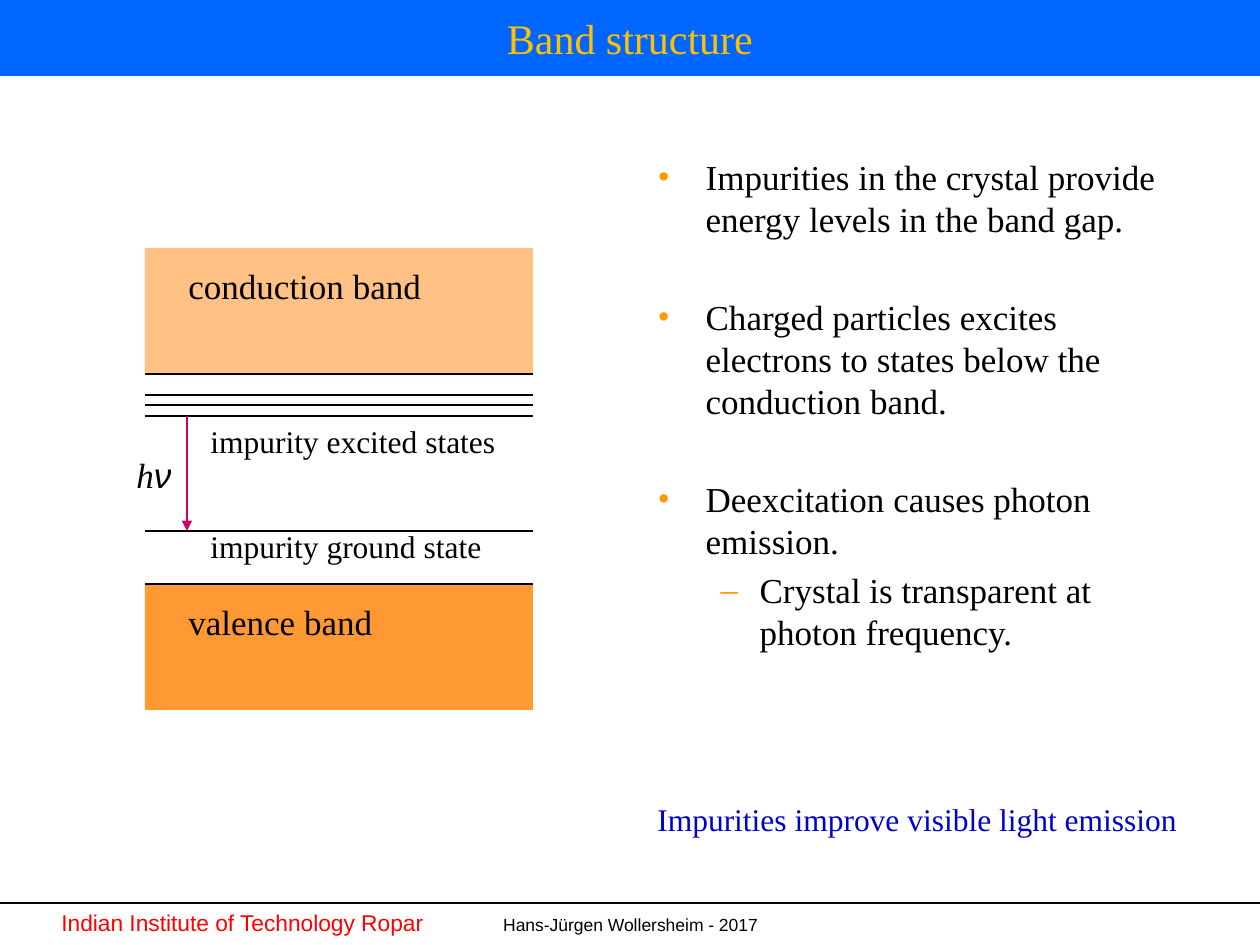
from dataclasses import dataclass
from typing import NamedTuple

from lxml.etree import SubElement
from pptx import Presentation
from pptx.dml.color import RGBColor
from pptx.enum.shapes import MSO_CONNECTOR as Connector, MSO_SHAPE as Preset
from pptx.enum.text import MSO_ANCHOR as Anchor, MSO_AUTO_SIZE as AutoSize, PP_ALIGN as Align
from pptx.oxml.ns import qn
from pptx.util import Emu, Pt

PX_PER_INCH = 126


@dataclass(frozen=True)
class Theme:
    serif: str = "Times New Roman"
    sans: str = "Arial"
    ink: str = "000000"
    banner: str = "0066FF"
    title: str = "FFC000"
    band: str = "FF9933"
    bullet: str = "FF9900"
    photon: str = "CC0066"
    conclusion: str = "0000CC"
    institute: str = "FF0000"
    title_size: int = 24
    body_size: int = 20
    note_size: int = 18
    institute_size: int = 13
    author_size: int = 10
    line_width: float = 1.5


THEME = Theme()


class Box(NamedTuple):
    left: int
    top: int
    width: int
    height: int


class Label(NamedTuple):
    text: str
    box: Box
    size: int
    font: str = THEME.serif
    color: str = THEME.ink
    wrap: bool = True
    align: Align = Align.LEFT


class Band(NamedTuple):
    top: int
    opacity: int


class Bullet(NamedTuple):
    text: str
    mark: str = "•"
    margin: int = 48
    hang: int = 48
    space_before: int = 32


BAND_LEFT, BAND_WIDTH, BAND_HEIGHT = 145, 388, 126
CONDUCTION_TOP, VALENCE_TOP = 248, 584
EXCITED_LEVELS = [395, 405, 416]
GROUND_LEVEL = 531
PHOTON_X = 187

BANDS = [Band(CONDUCTION_TOP, 60), Band(VALENCE_TOP, 100)]
LEVELS = [CONDUCTION_TOP + BAND_HEIGHT, VALENCE_TOP, *EXCITED_LEVELS, GROUND_LEVEL]

LABELS = [
    Label("conduction band", Box(176, CONDUCTION_TOP + 10, 305, 54), THEME.body_size),
    Label("valence band", Box(176, VALENCE_TOP + 10, 305, 54), THEME.body_size),
    Label("impurity excited states", Box(198, 416, 357, 50), THEME.note_size),
    Label("impurity ground state", Box(198, 521, 305, 50), THEME.note_size),
    Label("Impurities improve visible light emission", Box(645, 794, 551, 50),
          THEME.note_size, color=THEME.conclusion, wrap=False),
    Label("Hans-Jürgen Wollersheim - 2017", Box(1, 908, 1259, 37),
          THEME.author_size, THEME.sans, align=Align.CENTER),
    Label("Indian Institute of Technology Ropar", Box(49, 903, 392, 40),
          THEME.institute_size, THEME.sans, THEME.institute, wrap=False),
]

BULLETS = [
    Bullet("Impurities in the crystal provide energy levels in the band gap.", space_before=0),
    Bullet("Charged particles excites electrons to states below the conduction band."),
    Bullet("Deexcitation causes photon emission."),
    Bullet("Crystal is transparent at photon frequency.", "–", 102, 39, 4),
]


def px(length: int) -> Emu:
    return Emu(round(length * 914400 / PX_PER_INCH))


def apply(target, values: dict) -> None:
    for name, value in values.items():
        setattr(target, name, value)


def style_font(font, size: int, family: str, color: str, italic: bool = False) -> None:
    apply(font, {"size": Pt(size), "name": family, "italic": italic})
    font.color.rgb = RGBColor.from_string(color)


def place(shape, box: Box) -> None:
    apply(shape, {name: px(length) for name, length in box._asdict().items()})


def fill_solid(shape, color: str) -> None:
    shape.fill.solid()
    shape.fill.fore_color.rgb = RGBColor.from_string(color)


def draw_line(slide, start: tuple[int, int], end: tuple[int, int],
              color: str = THEME.ink, arrow: bool = False) -> None:
    line = slide.shapes.add_connector(Connector.STRAIGHT, *map(px, start + end))
    line.line.width = Pt(THEME.line_width)
    line.line.color.rgb = RGBColor.from_string(color)
    if arrow:
        SubElement(line.line._get_or_add_ln(), qn("a:tailEnd"), type="triangle")
    SubElement(line._element.spPr, qn("a:effectLst"))


def draw_band(slide, band: Band) -> None:
    box = Box(BAND_LEFT, band.top, BAND_WIDTH, BAND_HEIGHT)
    shape = slide.shapes.add_shape(Preset.RECTANGLE, *map(px, box))
    shape.shadow.inherit = False
    shape.line.fill.background()
    fill_solid(shape, THEME.band)
    if band.opacity < 100:
        color = shape._element.spPr.find(qn("a:solidFill"))[0]
        SubElement(color, qn("a:alpha"), val=str(band.opacity * 1000))


def draw_label(slide, label: Label) -> None:
    frame = slide.shapes.add_textbox(*map(px, label.box)).text_frame
    frame.word_wrap = label.wrap
    paragraph = frame.paragraphs[0]
    apply(paragraph, {"text": label.text, "alignment": label.align})
    style_font(paragraph.runs[0].font, label.size, label.font, label.color)


def draw_photon_energy(slide) -> None:
    draw_line(slide, (PHOTON_X, EXCITED_LEVELS[-1]), (PHOTON_X, GROUND_LEVEL),
              THEME.photon, arrow=True)
    frame = slide.shapes.add_textbox(*map(px, Box(124, 447, 63, 54))).text_frame
    frame.word_wrap = True
    for symbol, family in (("h", THEME.serif), ("ν", THEME.sans)):
        run = frame.paragraphs[0].add_run()
        run.text = symbol
        style_font(run.font, THEME.body_size, family, THEME.ink, italic=True)


def fill_title(title, text: str) -> None:
    place(title, Box(0, 0, 1260, 76))
    fill_solid(title, THEME.banner)
    frame = title.text_frame
    apply(frame, {"text": text, "vertical_anchor": Anchor.MIDDLE, "auto_size": AutoSize.NONE})
    frame.paragraphs[0].alignment = Align.CENTER
    style_font(frame.paragraphs[0].runs[0].font, THEME.title_size, THEME.serif, THEME.title)


def fill_bullets(body, bullets: list[Bullet]) -> None:
    place(body, Box(645, 149, 525, 567))
    frame = body.text_frame
    apply(frame, {"text": "\n".join(bullet.text for bullet in bullets),
                  "auto_size": AutoSize.NONE, "vertical_anchor": Anchor.TOP})
    for paragraph, bullet in zip(frame.paragraphs, bullets):
        properties = paragraph._p.get_or_add_pPr()
        properties.set("marL", str(px(bullet.margin)))
        properties.set("indent", str(-px(bullet.hang)))
        SubElement(SubElement(properties, qn("a:buClr")), qn("a:srgbClr"), val=THEME.bullet)
        SubElement(properties, qn("a:buFont"), typeface=THEME.serif)
        SubElement(properties, qn("a:buChar"), char=bullet.mark)
        apply(paragraph, {"level": int(bullet.mark == "–"), "line_spacing": Pt(24),
                          "space_before": Pt(bullet.space_before)})
        style_font(paragraph.runs[0].font, THEME.body_size, THEME.serif, THEME.ink)


def main() -> None:
    deck = Presentation()
    apply(deck, {"slide_width": px(1260), "slide_height": px(945)})
    slide = deck.slides.add_slide(deck.slide_layouts[1])
    fill_title(slide.shapes.title, "Band structure")
    fill_bullets(slide.placeholders[1], BULLETS)
    for band in BANDS:
        draw_band(slide, band)
    for level in LEVELS:
        draw_line(slide, (BAND_LEFT, level), (BAND_LEFT + BAND_WIDTH, level))
    draw_photon_energy(slide)
    draw_line(slide, (0, 903), (1260, 903))
    for label in LABELS:
        draw_label(slide, label)
    deck.save("out.pptx")


if __name__ == "__main__":
    main()
